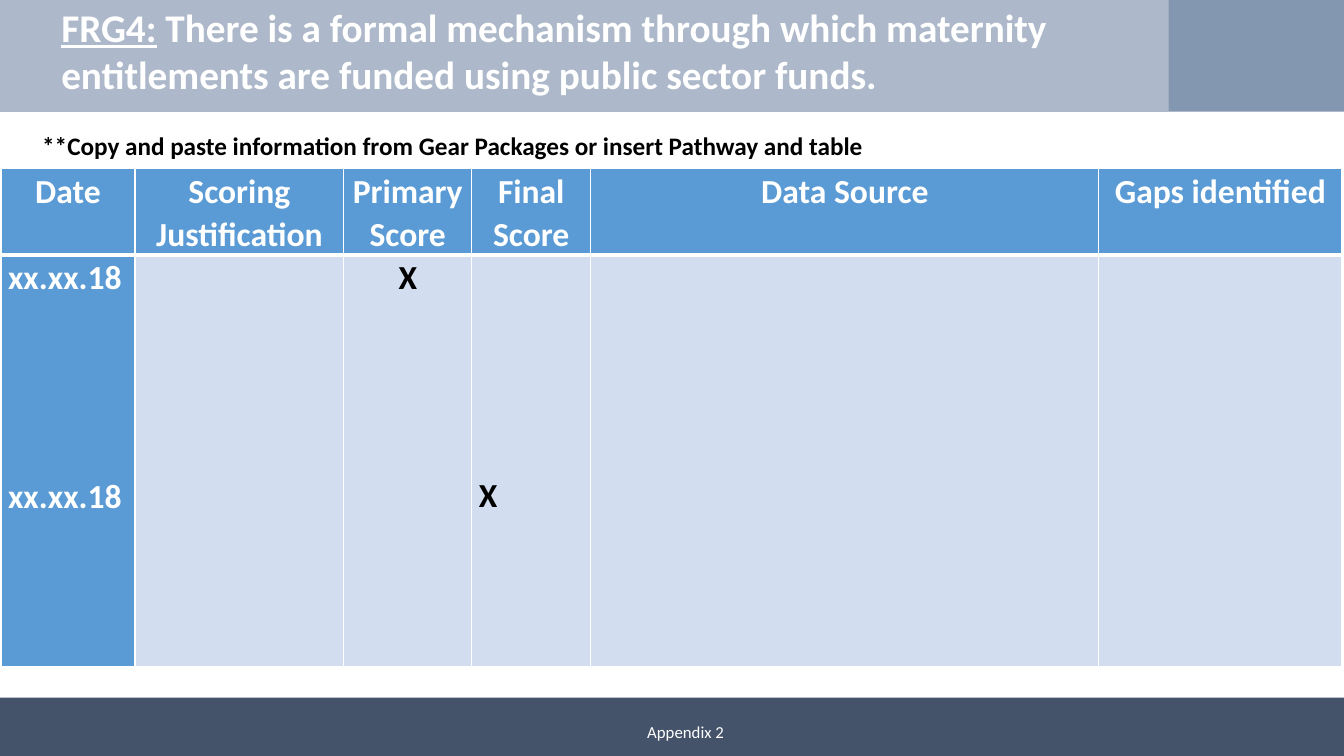
from dataclasses import dataclass

from lxml.etree import SubElement
from pptx import Presentation
from pptx.dml.color import RGBColor as RGB
from pptx.enum.shapes import MSO_SHAPE as Preset
from pptx.enum.text import MSO_ANCHOR as Anchor, PP_ALIGN as Align
from pptx.oxml.ns import qn
from pptx.util import Inches, Pt


@dataclass(frozen=True)
class Theme:
    font: str = "Calibri"
    white: str = "FFFFFF"
    black: str = "000000"
    band: str = "ADB9CA"
    corner: str = "8497B0"
    footer: str = "445369"
    header: str = "5B9BD5"
    body: str = "D2DEEF"
    title_size: int = 28
    table_size: int = 24
    note_size: int = 18
    footer_size: int = 12
    spacing: float = 1.07
    thin: int = 1
    thick: int = 3


class SlideBuilder:
    def __init__(self, slide, theme):
        self.shapes = slide.shapes
        self.theme = theme

    def format_para(self, para, size, color, bold=True, align=Align.LEFT, spacing=None):
        para.alignment = align
        if spacing:
            para.line_spacing = spacing
        for span in para.runs:
            span.font.name = self.theme.font
            span.font.size = Pt(size)
            span.font.bold = bold
            span.font.color.rgb = RGB.from_string(color)

    def block(self, left, top, width, height, color):
        shape = self.shapes.add_shape(
            Preset.RECTANGLE, Inches(left), Inches(top), Inches(width), Inches(height))
        shape.shadow.inherit = False
        shape.fill.solid()
        shape.fill.fore_color.rgb = RGB.from_string(color)
        shape.line.fill.background()

    def text(self, left, top, width, height, spans, size, color,
             anchor=Anchor.TOP, **style):
        box = self.shapes.add_textbox(
            Inches(left), Inches(top), Inches(width), Inches(height))
        frame = box.text_frame
        frame.word_wrap = True
        frame.vertical_anchor = anchor
        para = frame.paragraphs[0]
        for words in spans:
            para.add_run().text = words
        self.format_para(para, size, color, **style)
        return para

    def cell(self, cell, words, fill, color, align, top_width, bottom_width):
        theme = self.theme
        cell.margin_left = cell.margin_right = Inches(0.07)
        cell.margin_top = cell.margin_bottom = 0
        cell.text_frame.text = words
        for para in cell.text_frame.paragraphs:
            self.format_para(para, theme.table_size, color, align=align,
                             spacing=theme.spacing)
        # Borders come before the fill in the cell properties
        props = cell._tc.get_or_add_tcPr()
        widths = {"lnL": theme.thin, "lnR": theme.thin,
                  "lnT": top_width, "lnB": bottom_width}
        for side, width in widths.items():
            line = SubElement(props, qn(f"a:{side}"), w=str(Pt(width)))
            paint = SubElement(line, qn("a:solidFill"))
            SubElement(paint, qn("a:srgbClr"), val=theme.white)
        cell.fill.solid()
        cell.fill.fore_color.rgb = RGB.from_string(fill)

    def table(self, left, top, widths, heights, rows):
        theme = self.theme
        table = self.shapes.add_table(
            len(rows), len(widths), Inches(left), Inches(top),
            Inches(sum(widths)), Inches(sum(heights))).table
        table.horz_banding = False
        for column, width in zip(table.columns, widths):
            column.width = Inches(width)
        for row, height in zip(table.rows, heights):
            row.height = Inches(height)
        for r, row in enumerate(rows):
            for c, words in enumerate(row):
                heading = r == 0 or c == 0
                self.cell(
                    table.cell(r, c), words,
                    fill=theme.header if heading else theme.body,
                    color=theme.white if heading else theme.black,
                    align=Align.CENTER if r == 0 else Align.LEFT,
                    top_width=theme.thin if r == 0 else theme.thick,
                    bottom_width=theme.thick if r == 0 else theme.thin)
        return table


def main():
    theme = Theme()
    deck = Presentation()
    deck.slide_width, deck.slide_height = Inches(13.33), Inches(7.5)
    page = SlideBuilder(deck.slides.add_slide(deck.slide_layouts[6]), theme)

    # Title band, corner block and footer band
    page.block(0, 0, 13.33, 1.11, theme.band)
    page.block(0, 6.92, 13.33, 0.58, theme.footer)
    page.block(11.59, 0, 1.74, 1.1, theme.corner)
    page.text(2.39, 7.06, 8.82, 0.4, ["Appendix 2"], theme.footer_size, theme.white,
              anchor=Anchor.MIDDLE, bold=False, align=Align.CENTER)

    # Scoring table
    table = page.table(
        0.01, 1.67, [1.33, 2.07, 1.27, 1.18, 5.04, 2.41], [0.73, 4.09],
        [["Date", "Scoring Justification", "Primary Score", "Final Score",
          "Data Source", "Gaps identified"],
         ["xx.xx.18\nxx.xx.18", "", "X", "X", "", ""]])
    for column in (2, 3):
        table.cell(0, column).vertical_anchor = Anchor.MIDDLE

    # The second date and the final score share a line lower in the row
    table.cell(1, 0).text_frame.paragraphs[1].space_before = Pt(125)
    table.cell(1, 2).text_frame.paragraphs[0].alignment = Align.CENTER
    table.cell(1, 3).margin_top = Inches(2.16)

    # Note and title
    page.text(0.32, 1.22, 11.23, 0.43,
              ["**Copy and paste information from Gear Packages or insert Pathway and table"],
              theme.note_size, theme.black, spacing=theme.spacing)
    title = page.text(
        0.51, 0.1, 10.47, 0.8,
        ["FRG4:", " There is a formal mechanism through which maternity "
         "entitlements are funded using public sector funds."],
        theme.title_size, theme.white, anchor=Anchor.MIDDLE)
    title.runs[0].font.underline = True

    deck.save("out.pptx")


if __name__ == "__main__":
    main()
